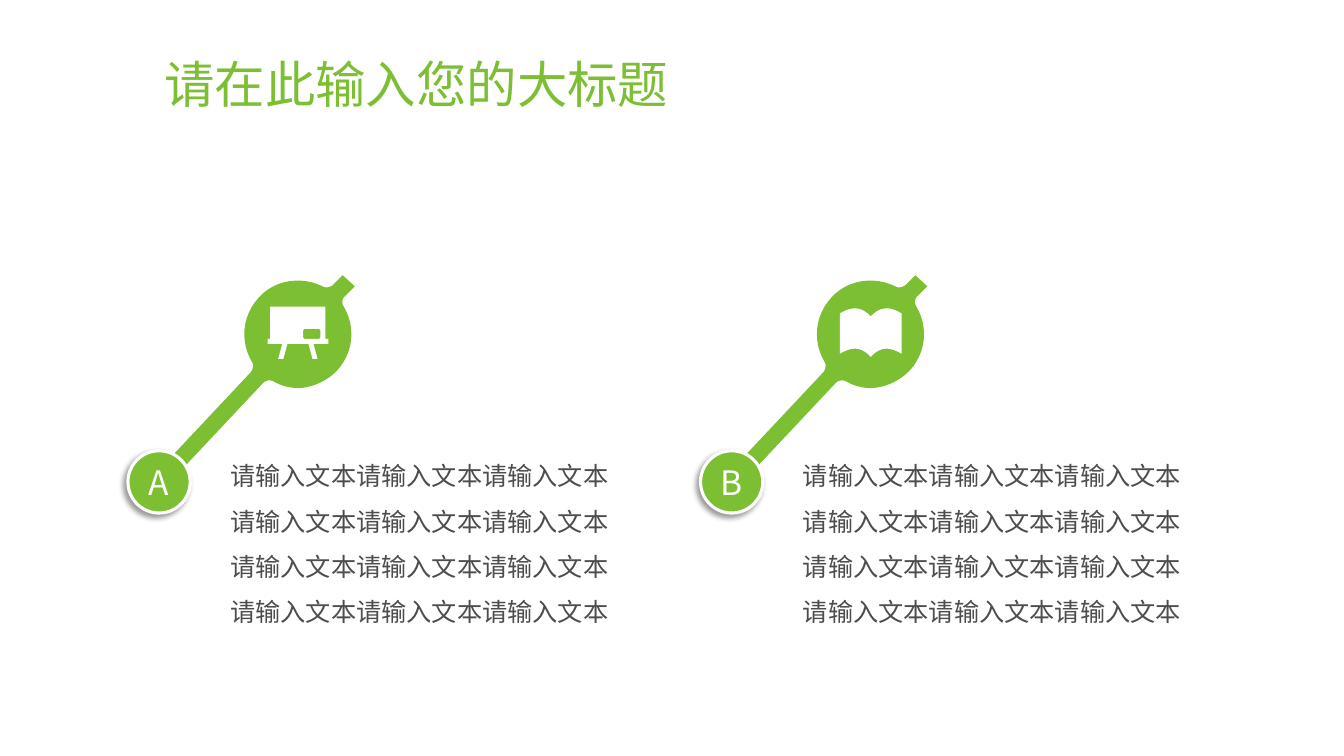
from dataclasses import dataclass

from lxml.etree import SubElement
from pptx import Presentation
from pptx.dml.color import RGBColor
from pptx.enum.shapes import MSO_SHAPE
from pptx.enum.text import MSO_ANCHOR, MSO_AUTO_SIZE, PP_ALIGN
from pptx.oxml.ns import qn
from pptx.shapes.autoshape import Shape
from pptx.slide import Slide
from pptx.text.text import TextFrame
from pptx.util import Pt

Path = list[tuple[float, ...]]


@dataclass(frozen=True)
class Theme:
    font: str = "Noto Sans CJK SC"
    green: str = "7CBF33"
    white: str = "FFFFFF"
    grey: str = "4D4D4D"
    black: str = "000000"
    title: int = 36
    badge: int = 24
    body: int = 18


@dataclass(frozen=True)
class Panel:
    letter: str
    left: float
    icon: list[Path]


THEME = Theme()
STEPS = 12  # line pieces per curve
BODY = "请输入文本" * 12

# A path step of two numbers is a line, one of six is a Bezier curve.
ROD: Path = [
    (240.5, 265),
    (252.7, 252, 254.2, 233.3, 245.5, 218.9),
    (244.1, 216.7, 244.1, 213.8, 246.2, 211.7),
    (253.4, 204.5), (244.8, 196.6), (237.6, 203.8),
    (235.4, 205.2, 232.6, 205.9, 230.4, 204.5),
    (216, 197.3, 196.6, 199.4, 185, 212.4),
    (172.8, 225.4, 171.4, 244.1, 180, 258.5),
    (181.4, 260.6, 180.7, 263.5, 179.3, 265.7),
    (122.4, 326.2), (131, 334.1), (187.9, 273.6),
    (190.1, 271.4, 193, 271.4, 195.1, 272.2),
    (200.9, 275.8, 207.4, 277.2, 213.8, 277.2),
    (223.9, 276.5, 233.3, 272.2, 240.5, 265),
]
BOARD: Path = [
    (234.6, 242), (232.4, 242), (232.4, 219), (193, 219), (193, 242),
    (191.1, 242), (191.1, 245.6), (201.6, 245.6), (198.7, 256.4),
    (202.4, 256.4), (205.3, 245.6), (220.3, 245.6), (223.2, 256.4),
    (226.8, 256.4), (223.9, 245.6), (234.6, 245.6),
]
DUSTER: Path = [
    (217.4, 235), (228, 235), (228.8, 235.8), (228.8, 241.2),
    (228, 242), (217.4, 242), (216.6, 241.2), (216.6, 235.8),
]
BOOK: Path = [
    (213, 226.1),
    (205.7, 218, 198.3, 219.5, 191, 223.9),
    (191, 252.7),
    (198.3, 248.3, 205.7, 246.8, 213, 254.9),
    (220.3, 246.8, 227.7, 248.3, 235, 252.7),
    (235, 223.9),
    (227.7, 219.5, 220.3, 218, 213, 226.1),
]
PANELS = [Panel("A", 0, [BOARD, DUSTER]), Panel("B", 409, [BOOK])]


def flatten(path: Path, left: float) -> list[tuple[int, int]]:
    """Turn lines and curves into plain corners, moved right by left."""
    spots = [path[0]]
    for step in path[1:]:
        if len(step) == 2:
            spots.append(step)
            continue
        knots = [spots[-1], step[:2], step[2:4], step[4:]]
        for i in range(1, STEPS + 1):
            t = i / STEPS
            u = 1 - t
            parts = (u**3, 3 * u * u * t, 3 * u * t * t, t**3)
            spots.append(tuple(
                sum(w * k[axis] for w, k in zip(parts, knots))
                for axis in (0, 1)))
    return [(Pt(left + x), Pt(y)) for x, y in spots]


def paint(shape: Shape, color: str) -> None:
    shape.shadow.inherit = False
    shape.fill.solid()
    shape.fill.fore_color.rgb = RGBColor.from_string(color)
    shape.line.fill.background()


def draw(slide: Slide, paths: list[Path], left: float, color: str) -> None:
    """Draw one filled outline; later paths cut holes in the first."""
    first, *holes = [flatten(path, left) for path in paths]
    pen = slide.shapes.build_freeform(*first[0], scale=1.0)
    pen.add_line_segments(first[1:], close=True)
    for hole in holes:
        pen.move_to(*hole[0])
        pen.add_line_segments(hole[1:], close=True)
    paint(pen.convert_to_shape(), color)


def write(frame: TextFrame, text: str, size: int, color: str,
          align: PP_ALIGN, space: float = 1.0) -> None:
    frame.auto_size = MSO_AUTO_SIZE.NONE
    frame.vertical_anchor = MSO_ANCHOR.MIDDLE
    frame.text = text
    para = frame.paragraphs[0]
    para.alignment = align
    para.line_spacing = space
    para.font.size = Pt(size)
    para.font.name = THEME.font
    para.font.color.rgb = RGBColor.from_string(color)
    props = para._p.pPr.find(qn("a:defRPr"))
    SubElement(props, qn("a:ea"), typeface=THEME.font)


def shade(shape: Shape) -> None:
    """Add a soft shadow to the lower left."""
    effects = shape._element.spPr.find(qn("a:effectLst"))
    outer = SubElement(effects, qn("a:outerShdw"), blurRad=str(Pt(4)),
                       dist=str(Pt(3)), dir=str(135 * 60000),
                       algn="tr", rotWithShape="0")
    tint = SubElement(outer, qn("a:srgbClr"), val=THEME.black)
    SubElement(tint, qn("a:alpha"), val="40000")


def add_badge(slide: Slide, panel: Panel) -> None:
    badge = slide.shapes.add_shape(
        MSO_SHAPE.OVAL, Pt(91.4 + panel.left), Pt(322), Pt(44.5), Pt(44.5))
    paint(badge, THEME.green)
    badge.line.color.rgb = RGBColor.from_string(THEME.white)
    badge.line.width = Pt(2.25)
    shade(badge)
    frame = badge.text_frame
    frame.margin_left = frame.margin_right = Pt(0)
    frame.margin_top = frame.margin_bottom = Pt(0)
    frame.word_wrap = False
    write(frame, panel.letter, THEME.badge, THEME.white, PP_ALIGN.CENTER)


def add_panel(slide: Slide, panel: Panel) -> None:
    draw(slide, [ROD], panel.left, THEME.green)
    add_badge(slide, panel)
    draw(slide, panel.icon, panel.left, THEME.white)
    box = slide.shapes.add_textbox(
        Pt(150.5 + panel.left), Pt(301.7), Pt(298), Pt(162.7))
    box.text_frame.word_wrap = True
    write(box.text_frame, BODY, THEME.body, THEME.grey, PP_ALIGN.CENTER, 1.5)


def main() -> None:
    deck = Presentation()
    deck.slide_width, deck.slide_height = Pt(960), Pt(540)
    slide = deck.slides.add_slide(deck.slide_layouts[5])
    title = slide.shapes.title
    title.left, title.top = Pt(110.2), Pt(28.8)
    title.width, title.height = Pt(763.2), Pt(67)
    write(title.text_frame, "请在此输入您的大标题", THEME.title, THEME.green,
          PP_ALIGN.LEFT, 0.9)
    for panel in PANELS:
        add_panel(slide, panel)
    deck.save("out.pptx")


if __name__ == "__main__":
    main()
